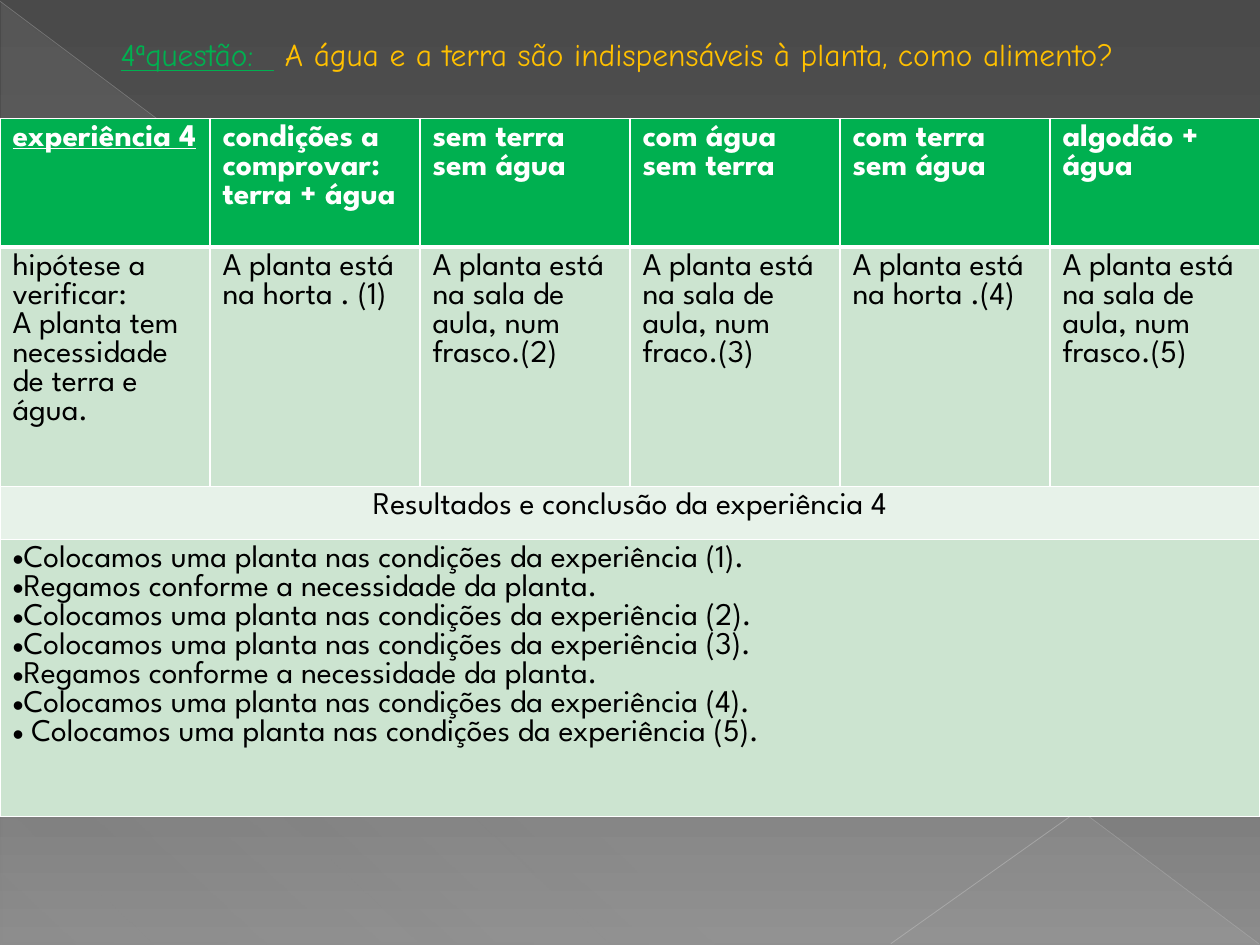
from dataclasses import dataclass

from lxml.etree import SubElement as Sub
from pptx import Presentation
from pptx.dml.color import RGBColor as RGB
from pptx.enum.shapes import MSO_CONNECTOR as Link, MSO_SHAPE as Shape
from pptx.enum.text import MSO_ANCHOR as Anchor, MSO_AUTO_SIZE as Fit, PP_ALIGN as Align
from pptx.oxml.ns import qn
from pptx.util import Inches, Pt


@dataclass(frozen=True)
class Theme:
    green: str = "00B050"
    gold: str = "FFC000"
    white: str = "FFFFFF"
    black: str = "000000"
    band: str = "CCE4D0"
    pale: str = "E7F2E9"
    size: int = 18
    thin: int = 1
    thick: int = 3
    title: str = "Comic Neue"
    body: str = "League Spartan"
    back: tuple = ((0, "4A4A4A", 100), (60, "626262", 100), (100, "8C8C8C", 100))
    sheen: tuple = ((0, "D2D2D2", 10), (70, "D2D2D2", 8), (100, "D2D2D2", 1))


LOOK = Theme()

HEADS = ["experiência 4", "condições a comprovar:\nterra + água", "sem terra\nsem água",
         "com água\nsem terra", "com terra\nsem água", "algodão + água"]
PLANTS = ["hipótese a verificar:\nA planta tem necessidade de terra e água.",
          "A planta está na horta . (1)",
          "A planta está na sala de aula, num frasco.(2)",
          "A planta está na sala de aula, num fraco.(3)",
          "A planta está na horta .(4)",
          "A planta está na sala de aula, num frasco.(5)"]
RESULT = "Resultados e conclusão da experiência 4"
PLACED = "Colocamos uma planta nas condições da experiência ({})."
WATER = "Regamos conforme a necessidade da planta."
STEPS = [PLACED.format(1), WATER, PLACED.format(2), PLACED.format(3), WATER,
         PLACED.format(4), " " + PLACED.format(5)]
ROWS = [1.02, 1.9, 0.42, 2.2]


def tint(node, color, alpha=100):
    clr = Sub(node, qn("a:srgbClr"), val=color)
    if alpha < 100:
        Sub(clr, qn("a:alpha"), val=str(alpha * 1000))


def blend(fill, node, stops, angle):
    """Give a fill, held within node, a linear gradient."""
    fill.gradient()
    grad = node.find(".//" + qn("a:gradFill"))
    group = grad.find(qn("a:gsLst"))
    for old in list(group):
        group.remove(old)
    for pos, color, alpha in stops:
        tint(Sub(group, qn("a:gs"), pos=str(pos * 1000)), color, alpha)
    grad.find(qn("a:lin")).set("ang", str(angle * 60000))


def style(run, font, color, bold=False, under=False):
    run.font.name, run.font.size = font, Pt(LOOK.size)
    run.font.color.rgb = RGB.from_string(color)
    run.font.bold, run.font.underline = bold, under


def add_line(slide, start, end, color, width, alpha):
    line = slide.shapes.add_connector(Link.STRAIGHT, *map(Inches, start + end))
    line.line.width = Pt(width)
    line.line.color.rgb = RGB.from_string(color)
    props = line.element.spPr
    Sub(props.find(".//" + qn("a:srgbClr")), qn("a:alpha"), val=str(alpha * 1000))
    Sub(props, qn("a:effectLst"))


def add_back(slide):
    blend(slide.background.fill, slide.element, LOOK.back, 90)
    wedge = slide.shapes.add_shape(Shape.RIGHT_TRIANGLE, Inches(0.01), Inches(0.02),
                                   Inches(9.99), Inches(7.48))
    wedge.shadow.inherit = False
    wedge.line.fill.background()
    blend(wedge.fill, wedge.element, LOOK.sheen, 133)
    add_line(slide, (0, 0.01), (9.99, 7.49), "BFBFBF", 0.39, 35)
    add_line(slide, (10, 5.41), (7.07, 7.49), "C6C6C6", 0.47, 45)


def add_title(slide):
    box = slide.shapes.add_textbox(Inches(0.86), Inches(0.23), Inches(9.14), Inches(0.4))
    frame = box.text_frame
    frame.word_wrap, frame.auto_size = True, Fit.SHAPE_TO_FIT_TEXT
    frame.vertical_anchor = Anchor.MIDDLE
    parts = [("4ªquestão:  ", LOOK.green, True),
             (" A água e a terra são indispensáveis à planta, como alimento?", LOOK.gold, False)]
    for text, color, under in parts:
        run = frame.paragraphs[0].add_run()
        run.text = text
        style(run, LOOK.title, color, under=under)


def edge(cell, top, bottom):
    props = cell._tc.get_or_add_tcPr()
    widths = {"L": LOOK.thin, "R": LOOK.thin, "T": top, "B": bottom}
    for spot, (side, width) in enumerate(widths.items()):
        line = Sub(props, qn("a:ln" + side), w=str(Pt(width)))
        tint(Sub(line, qn("a:solidFill")), LOOK.white)
        props.insert(spot, line)


def fill_cell(cell, text, back, color=LOOK.black, bold=False, under=False):
    cell.fill.solid()
    cell.fill.fore_color.rgb = RGB.from_string(back)
    cell.text_frame.text = text
    for para in cell.text_frame.paragraphs:
        for run in para.runs:
            style(run, LOOK.body, color, bold, under)


def add_bullet(para):
    props = para._p.get_or_add_pPr()
    props.set("marL", "0")
    props.set("indent", "0")
    Sub(props, qn("a:buFont"), typeface="Arial")
    Sub(props, qn("a:buChar"), char="•")


def add_grid(slide):
    cols = len(HEADS)
    grid = slide.shapes.add_table(len(ROWS), cols, Inches(0), Inches(0.94),
                                  Inches(10), Inches(sum(ROWS))).table
    for row, height in zip(grid.rows, ROWS):
        row.height = Inches(height)

    # White rules, heavier under the heading
    for num, row in enumerate(grid.rows):
        for cell in row.cells:
            edge(cell, LOOK.thick if num == 1 else LOOK.thin,
                 LOOK.thick if num == 0 else LOOK.thin)

    # Headings and conditions
    for col, (head, plant) in enumerate(zip(HEADS, PLANTS)):
        fill_cell(grid.cell(0, col), head, LOOK.green, LOOK.white, True, col == 0)
        fill_cell(grid.cell(1, col), plant, LOOK.band)

    # Results across the full width
    for row, text, back in [(2, RESULT, LOOK.pale), (3, "\n".join(STEPS), LOOK.band)]:
        grid.cell(row, 0).merge(grid.cell(row, cols - 1))
        fill_cell(grid.cell(row, 0), text, back)
    grid.cell(2, 0).text_frame.paragraphs[0].alignment = Align.CENTER
    for para in grid.cell(3, 0).text_frame.paragraphs:
        add_bullet(para)


def main():
    deck = Presentation()
    deck.slide_width, deck.slide_height = Inches(10), Inches(7.5)
    slide = deck.slides.add_slide(deck.slide_layouts[6])
    add_back(slide)
    add_title(slide)
    add_grid(slide)
    deck.save("out.pptx")


if __name__ == "__main__":
    main()
